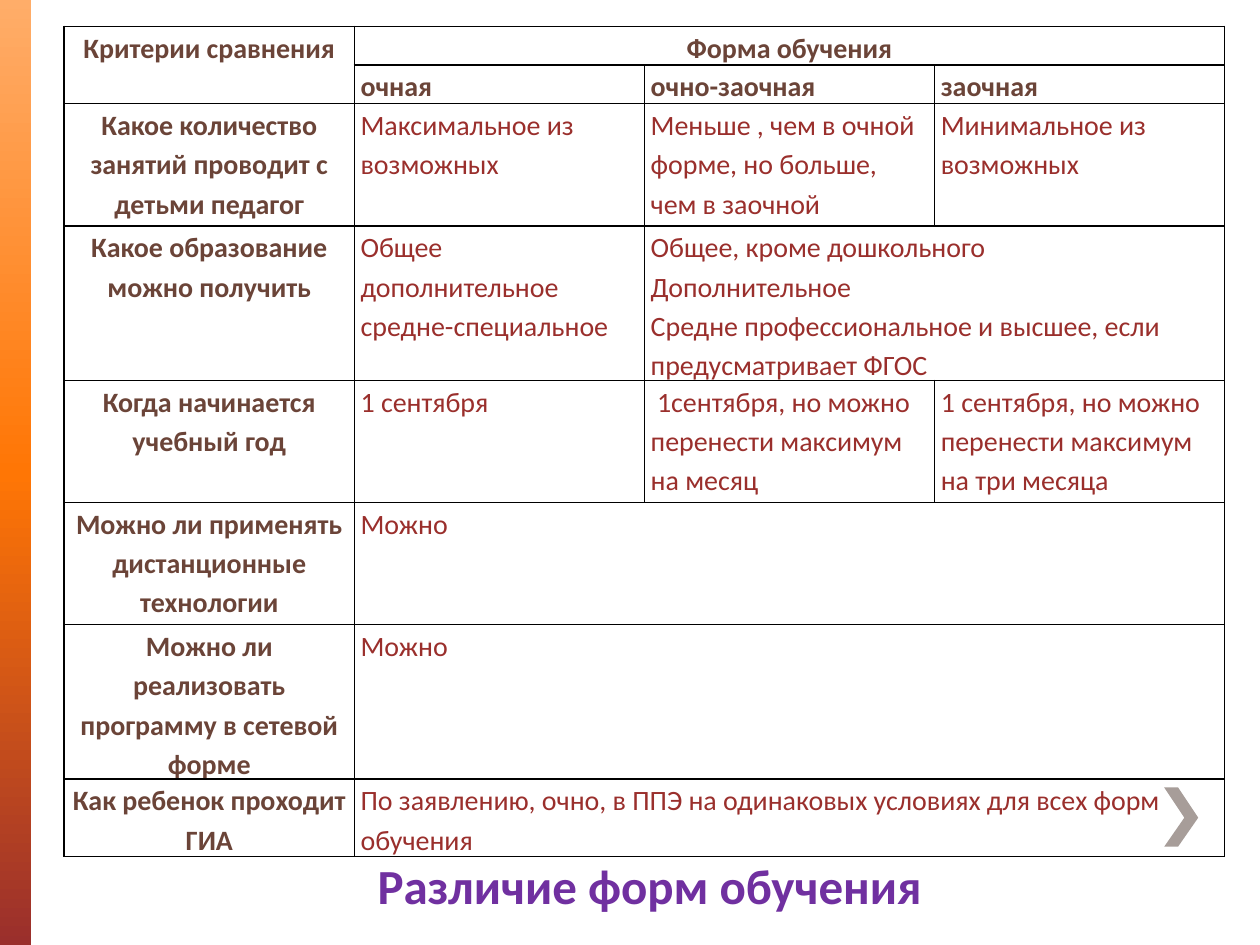
"""Build a slide with a table comparing the forms of study."""
import pptx
import pptx.util
import pptx.dml.color
import pptx.enum.shapes
import pptx.enum.text
import pptx.oxml
import pptx.oxml.ns

Inches = pptx.util.Inches
Pt = pptx.util.Pt
RGB = pptx.dml.color.RGBColor
ALIGN = pptx.enum.text.PP_ALIGN
ANCHOR = pptx.enum.text.MSO_ANCHOR

BROWN = RGB(0x6B, 0x44, 0x38)
RED = RGB(0x9A, 0x2F, 0x2C)
PURPLE = RGB(0x70, 0x30, 0xA0)
GREY = RGB(0xA7, 0x9D, 0x99)
BLACK = RGB(0, 0, 0)
PEACH = RGB(0xFF, 0xAD, 0x69)
ORANGE = RGB(0xFF, 0x76, 0x05)
NS = pptx.oxml.ns.nsdecls("a")


def write(frame, text, size=16, color=RED, bold=False, align=ALIGN.LEFT, space=1.15):
    frame.word_wrap = True
    for i, line in enumerate(text.split("\n")):
        para = frame.paragraphs[0] if i == 0 else frame.add_paragraph()
        para.alignment = align
        para.line_spacing = space
        run = para.add_run()
        run.text = line
        run.font.name = "Calibri"
        run.font.size = Pt(size)
        run.font.bold = bold
        run.font.color.rgb = color


deck = pptx.Presentation()
deck.slide_width = Inches(10)
deck.slide_height = Inches(7.5)
slide = deck.slides.add_slide(deck.slide_layouts[6])

bar = slide.shapes.add_shape(
    pptx.enum.shapes.MSO_SHAPE.RECTANGLE, 0, 0, Inches(0.25), Inches(7.5))
bar.shadow.inherit = False
bar.line.fill.background()
stops = "".join(
    f'<a:gs pos="{pos * 1000}"><a:srgbClr val="{color}"/></a:gs>'
    for pos, color in ((0, PEACH), (50, ORANGE), (100, RED)))
bar._element.spPr.find(pptx.oxml.ns.qn("a:prstGeom")).addnext(pptx.oxml.parse_xml(
    f'<a:gradFill {NS} rotWithShape="1"><a:gsLst>{stops}</a:gsLst>'
    '<a:lin ang="5400000" scaled="0"/></a:gradFill>'))

path = slide.shapes.build_freeform(Inches(9.35), Inches(6.25))
points = ((9.24, 6.25), (9.4, 6.49), (9.24, 6.72), (9.35, 6.72), (9.51, 6.49))
path.add_line_segments([(Inches(x), Inches(y)) for x, y in points], close=True)
arrow = path.convert_to_shape()
arrow.shadow.inherit = False
arrow.fill.solid()
arrow.fill.fore_color.rgb = GREY
arrow.line.fill.background()

title = slide.shapes.add_textbox(
    Inches(0.59), Inches(6.82), Inches(9.13), Inches(0.47)).text_frame
title.vertical_anchor = ANCHOR.BOTTOM
title.margin_top = 0
title.margin_bottom = Inches(0.03)
write(title, "Различие форм обучения", size=28, color=PURPLE, bold=True,
      align=ALIGN.CENTER, space=1.0)

rows = [
    ["Критерии сравнения", "Форма обучения", None, None],
    [None, "очная", "очно-заочная", "заочная"],
    ["Какое количество занятий проводит с детьми педагог",
     "Максимальное из возможных",
     "Меньше , чем в очной форме, но больше, чем в заочной",
     "Минимальное из возможных"],
    ["Какое образование можно получить",
     "Общее\nдополнительное\nсредне-специальное",
     "Общее, кроме дошкольного\nДополнительное\n"
     "Средне профессиональное и высшее, если предусматривает ФГОС", None],
    ["Когда начинается учебный год", "1 сентября",
     " 1сентября, но можно перенести максимум на месяц",
     "1 сентября, но можно перенести максимум на три месяца"],
    ["Можно ли применять дистанционные технологии", "Можно", None, None],
    ["Можно ли реализовать программу в сетевой форме", "Можно", None, None],
    ["Как ребенок проходит ГИА",
     "По заявлению, очно, в ППЭ на одинаковых условиях для всех форм обучения",
     None, None],
]
highs = [0.28] * 2 + [0.97] * 5 + [0.49]
table = slide.shapes.add_table(
    len(rows), 4, Inches(0.51), Inches(0.21), Inches(9.21), Inches(sum(highs))).table
table.first_row = False
table.horz_banding = False
for row, high in zip(table.rows, highs):
    row.height = Inches(high)

for r, row in enumerate(rows):
    for c, text in enumerate(row):
        cell = table.cell(r, c)
        cell.margin_left = cell.margin_right = Inches(0.05)
        cell.margin_top = cell.margin_bottom = 0
        cell.fill.background()
        for i, side in enumerate("LRTB"):
            cell._tc.get_or_add_tcPr().insert(i, pptx.oxml.parse_xml(
                f'<a:ln{side} {NS} w="{Pt(1)}"><a:solidFill>'
                f'<a:srgbClr val="{BLACK}"/></a:solidFill></a:ln{side}>'))
        if text:
            head = r < 2 or c == 0
            mid = c == 0 or r == 0
            write(cell.text_frame, text, color=BROWN if head else RED, bold=head,
                  align=ALIGN.CENTER if mid else ALIGN.LEFT)

table.cell(0, 0).merge(table.cell(1, 0))
for r, c in ((0, 1), (3, 2), (5, 1), (6, 1), (7, 1)):
    table.cell(r, c).merge(table.cell(r, 3))

deck.save("out.pptx")
